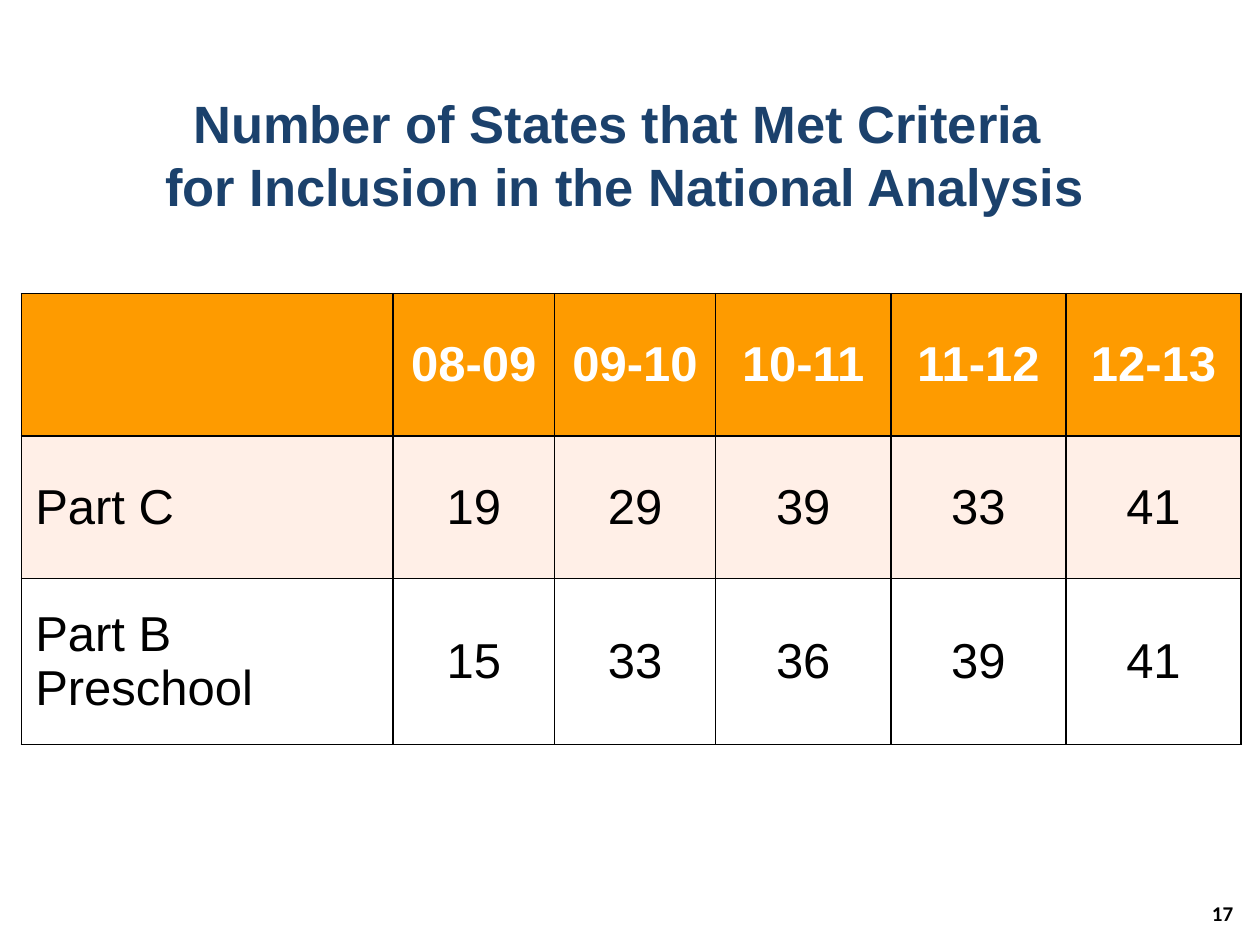
"""Build the slide that counts the states included in the national analysis."""
from lxml import etree
from pptx import Presentation
from pptx.dml.color import RGBColor
from pptx.enum.text import MSO_ANCHOR, PP_ALIGN
from pptx.oxml.ns import qn
from pptx.util import Inches, Pt

CENTER, LEFT = PP_ALIGN.CENTER, PP_ALIGN.LEFT
TOP, MIDDLE = MSO_ANCHOR.TOP, MSO_ANCHOR.MIDDLE

TITLE = "Number of States that Met Criteria \vfor Inclusion in the National Analysis"
PAGE_NUMBER = "17"
ROWS = [
    ["", "08-09", "09-10", "10-11", "11-12", "12-13"],
    ["Part C", "19", "29", "39", "33", "41"],
    ["Part B Preschool", "15", "33", "36", "39", "41"],
]
COLUMN_WIDTHS = [2.95, 1.28, 1.28, 1.39, 1.39, 1.39]
ROW_HEIGHTS = [1.13, 1.13, 1.32]
COLORS = {"title": "1B416C", "header": "FE9B00", "band": "FFEFE7",
          "white": "FFFFFF", "black": "000000"}
ROW_FILLS = ["header", "band", "white"]


def style(para, size, color, bold, align=LEFT, name="Arial"):
    para.alignment = align
    para.font.name = name
    para.font.size = Pt(size)
    para.font.bold = bold
    para.font.color.rgb = RGBColor.from_string(COLORS[color])


def add_borders(cell):
    properties = cell._tc.get_or_add_tcPr()
    for position, side in enumerate(("a:lnL", "a:lnR", "a:lnT", "a:lnB")):
        line = etree.Element(qn(side), w=str(Pt(1)))
        fill = etree.SubElement(line, qn("a:solidFill"))
        etree.SubElement(fill, qn("a:srgbClr"), val=COLORS["black"])
        properties.insert(position, line)


def add_title(page):
    title = page.shapes.title
    title.left, title.top = Inches(0.17), Inches(0.67)
    title.width, title.height = Inches(9.58), Inches(0.83)
    frame = title.text_frame
    frame.text = TITLE
    frame.vertical_anchor = TOP
    style(frame.paragraphs[0], 30, "title", True, CENTER)


def add_table(page):
    table = page.shapes.add_table(
        len(ROWS), len(COLUMN_WIDTHS), Inches(0.17), Inches(2.33),
        Inches(sum(COLUMN_WIDTHS)), Inches(sum(ROW_HEIGHTS))).table
    for column, width in zip(table.columns, COLUMN_WIDTHS):
        column.width = Inches(width)
    for row, height in zip(table.rows, ROW_HEIGHTS):
        row.height = Inches(height)
    for r, texts in enumerate(ROWS):
        header = r == 0
        for c, text in enumerate(texts):
            cell = table.cell(r, c)
            cell.text = text
            cell.vertical_anchor = MIDDLE
            cell.margin_left = cell.margin_right = Inches(0.11)
            cell.margin_top = cell.margin_bottom = Inches(0.05)
            cell.fill.solid()
            cell.fill.fore_color.rgb = RGBColor.from_string(COLORS[ROW_FILLS[r]])
            add_borders(cell)
            style(cell.text_frame.paragraphs[0], 28,
                  "white" if header else "black", header, CENTER if c else LEFT)


def add_page_number(page):
    box = page.shapes.add_textbox(Inches(9.52), Inches(7.1), Inches(0.5), Inches(0.4))
    frame = box.text_frame
    frame.word_wrap = True
    frame.text = PAGE_NUMBER
    style(frame.paragraphs[0], 12, "black", True, name="Calibri")


def main():
    deck = Presentation()
    deck.slide_width, deck.slide_height = Inches(10), Inches(7.5)
    page = deck.slides.add_slide(deck.slide_layouts.get_by_name("Title Only"))
    add_title(page)
    add_page_number(page)
    add_table(page)
    deck.save("out.pptx")


if __name__ == "__main__":
    main()
